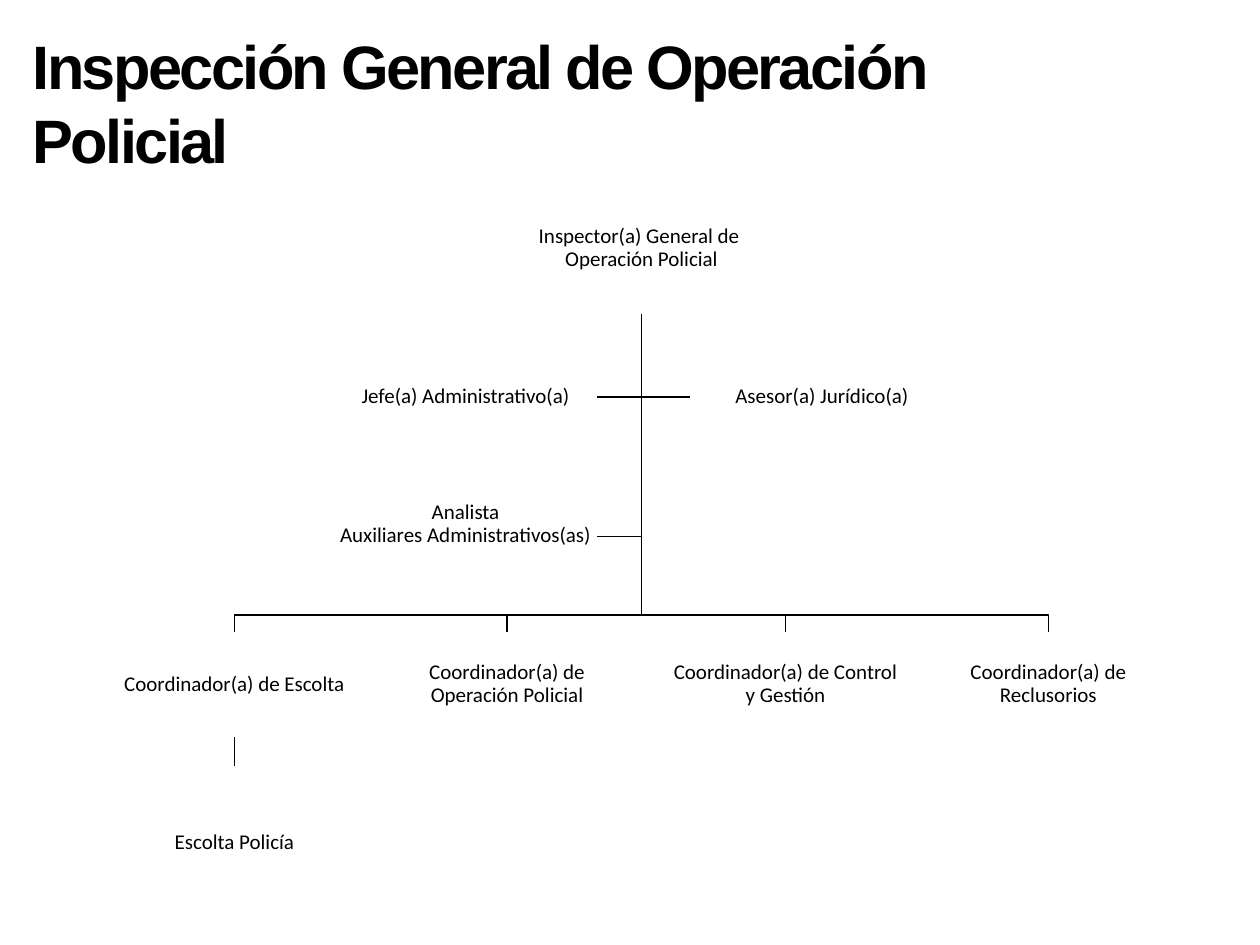
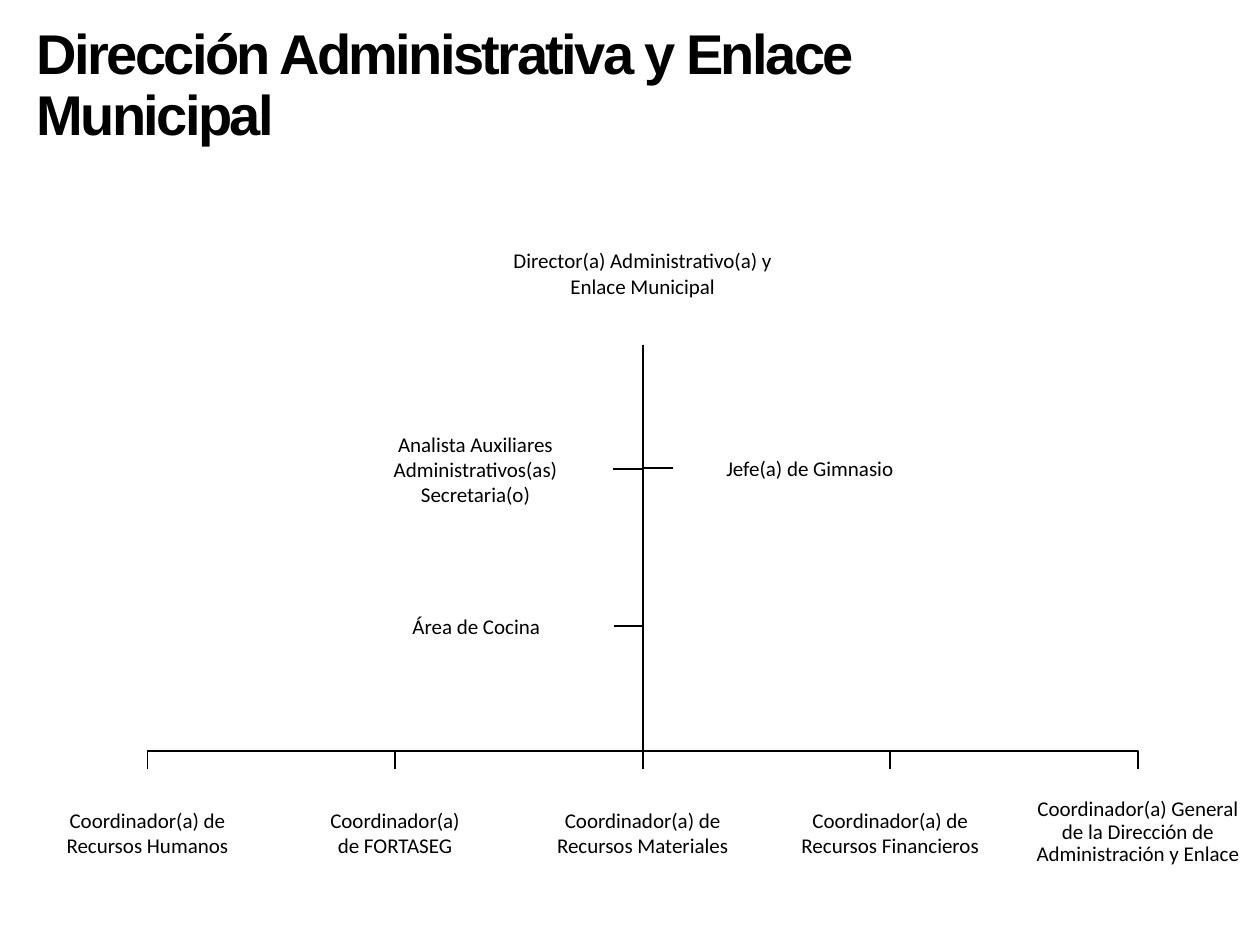
from dataclasses import dataclass
from typing import Any

from lxml.etree import SubElement as SubElem
from pptx import Presentation
from pptx.dml.color import RGBColor as Rgb
from pptx.enum.shapes import MSO_CONNECTOR as Link, MSO_SHAPE as Form
from pptx.enum.text import MSO_ANCHOR as Anchor, MSO_AUTO_SIZE as Fit, PP_ALIGN as Align
from pptx.oxml.ns import qn
from pptx.util import Pt

TOP, LOW = 0, 2


@dataclass(frozen=True)
class Theme:
    ink: Rgb = Rgb(0, 0, 0)
    paper: Rgb = Rgb(255, 255, 255)
    head: str = "Arial"
    body: str = "Calibri"
    size: float = 12
    line: float = 1
    pad: float = 0.72
    track: int = -150


@dataclass(frozen=True)
class Box:
    text: str
    x: float
    y: float
    w: float
    h: float
    lead: float = 1
    foot: float = Theme.pad


@dataclass(frozen=True)
class Title:
    text: str
    x: float
    y: float
    h: float
    size: float
    lead: float = 1
    w: float = 537.1


@dataclass(frozen=True)
class Chart:
    title: Title
    root: Box
    bus: float
    west: list[Box]
    east: list[Box]
    kids: list[Box]
    under: list[Box]


LOOK = Theme()
TIGHT = 0.9


def apply(obj: Any, vals: dict[str, Any]) -> None:
    for key, val in vals.items():
        setattr(obj, key, val)


def style(frame: Any, face: str, size: float, bold: bool, align: Any, lead: float) -> None:
    for para in frame.paragraphs:
        apply(para, {"alignment": align, "line_spacing": lead})
        for run in para.runs:
            apply(run.font, {"name": face, "size": Pt(size), "bold": bold})
            run.font.color.rgb = LOOK.ink


def draw_title(slide: Any, spec: Title) -> None:
    shape = slide.shapes.title
    apply(shape, {"left": Pt(spec.x), "top": Pt(spec.y),
                  "width": Pt(spec.w), "height": Pt(spec.h)})
    frame = shape.text_frame
    apply(frame, {"text": spec.text, "word_wrap": True,
                  "vertical_anchor": Anchor.TOP, "auto_size": Fit.SHAPE_TO_FIT_TEXT})
    style(frame, LOOK.head, spec.size, True, Align.LEFT, spec.lead)
    for run in frame.paragraphs[0].runs:
        run.font._element.set("spc", str(LOOK.track))


def draw_box(slide: Any, box: Box) -> Any:
    shape = slide.shapes.add_shape(Form.RECTANGLE, Pt(box.x), Pt(box.y), Pt(box.w), Pt(box.h))
    shape.shadow.inherit = False
    shape.fill.solid()
    shape.fill.fore_color.rgb = LOOK.paper
    shape.line.fill.background()
    frame = shape.text_frame
    pad = Pt(LOOK.pad)
    apply(frame, {"text": box.text, "word_wrap": True, "vertical_anchor": Anchor.MIDDLE,
                  "margin_left": pad, "margin_right": pad,
                  "margin_top": pad, "margin_bottom": Pt(box.foot)})
    style(frame, LOOK.body, LOOK.size, False, Align.CENTER, box.lead)
    return shape


def ink_line(shape: Any) -> None:
    shape.line.color.rgb = LOOK.ink
    shape.line.width = Pt(LOOK.line)


def join(slide: Any, head: Any, foot: Any) -> None:
    line = slide.shapes.add_connector(Link.STRAIGHT, mid_x(head), head.top, mid_x(foot), foot.top)
    line.begin_connect(head, LOW)
    line.end_connect(foot, TOP)
    ink_line(line)
    SubElem(line._element.spPr, qn("a:effectLst"))


def draw_bend(slide: Any, *dots: tuple[int, int]) -> None:
    pen = slide.shapes.build_freeform(*dots[0])
    pen.add_line_segments(dots[1:], close=False)
    bend = pen.convert_to_shape()
    bend.shadow.inherit = False
    bend.fill.background()
    ink_line(bend)


def mid_x(shape: Any) -> int:
    return shape.left + shape.width // 2


def draw_side(slide: Any, root: Any, box: Box, west: bool) -> None:
    shape = draw_box(slide, box)
    trunk, y = mid_x(root), shape.top + shape.height // 2
    edge = shape.left + shape.width if west else shape.left
    draw_bend(slide, (trunk, root.top + root.height), (trunk, y), (edge, y))


def draw_kid(slide: Any, root: Any, box: Box, bus: int) -> Any:
    shape = draw_box(slide, box)
    trunk, x = mid_x(root), mid_x(shape)
    if abs(trunk - x) < Pt(1):
        join(slide, root, shape)
    else:
        draw_bend(slide, (trunk, root.top + root.height), (trunk, bus), (x, bus), (x, shape.top))
    return shape


def draw_chart(slide: Any, plan: Chart) -> None:
    draw_title(slide, plan.title)
    root = draw_box(slide, plan.root)
    for west, boxes in ((True, plan.west), (False, plan.east)):
        for box in boxes:
            draw_side(slide, root, box, west)
    kids = [draw_kid(slide, root, box, Pt(plan.bus)) for box in plan.kids]
    for kid, box in zip(kids, plan.under):
        join(slide, kid, draw_box(slide, box))


POLICE = Chart(
    title=Title("Inspección General de Operación Policial", 11.5, 12.8, 92.2, 35),
    root=Box("Inspector(a) General de \vOperación Policial", 289.9, 104.2, 153.4, 75.2, TIGHT),
    bus=351.4,
    west=[
        Box("Jefe(a) Administrativo(a)", 190.8, 196.6, 150.5, 60.5, TIGHT),
        Box("Analista\vAuxiliares Administrativos(as)", 190.8, 276.3, 150.5, 60.5, TIGHT, 14.5),
    ],
    east=[Box("Asesor(a) Jurídico(a)", 394.5, 196.6, 150.5, 60.5, TIGHT)],
    kids=[
        Box(text, x, 360.9, 134.6, 60.5, TIGHT)
        for text, x in (
            ("Coordinador(a) de Escolta", 66.7),
            ("Coordinador(a) de Operación Policial", 222.5),
            ("Coordinador(a) de Control y Gestión", 381.6),
            ("Coordinador(a) de Reclusorios", 531.8),
        )
    ],
    under=[Box("Escolta Policía", 66.7, 437.8, 134.6, 87.8, TIGHT)],
)

ADMIN = Chart(
    title=Title("Dirección Administrativa y Enlace Municipal", 13.7, 11.3, 77, 32, TIGHT),
    root=Box("Director(a) Administrativo(a) y Enlace Municipal", 282.3, 115, 169.9, 82.1),
    bus=429.1,
    west=[
        Box("Analista Auxiliares Administrativos(as)\nSecretaria(o)", 193.2, 234.6, 157, 67),
        Box("Área de Cocina", 193.7, 324.3, 157, 67),
    ],
    east=[Box("Jefe(a) de Gimnasio", 384.3, 234, 157, 67)],
    kids=[
        Box(text, 23.4 + 141.5 * i, 439.2, 121.7, 72.7, lead)
        for i, (text, lead) in enumerate((
            ("Coordinador(a) de Recursos Humanos", 1),
            ("Coordinador(a)\nde FORTASEG", 1),
            ("Coordinador(a) de\nRecursos Materiales", 1),
            ("Coordinador(a) de\nRecursos Financieros", 1),
            ("Coordinador(a) General de la Dirección de Administración y Enlace", TIGHT),
        ))
    ],
    under=[],
)


def main() -> None:
    deck = Presentation()
    apply(deck, {"slide_width": Pt(720), "slide_height": Pt(540)})
    for plan in (POLICE, ADMIN):
        draw_chart(deck.slides.add_slide(deck.slide_layouts[5]), plan)
    deck.save("out.pptx")


if __name__ == "__main__":
    main()
